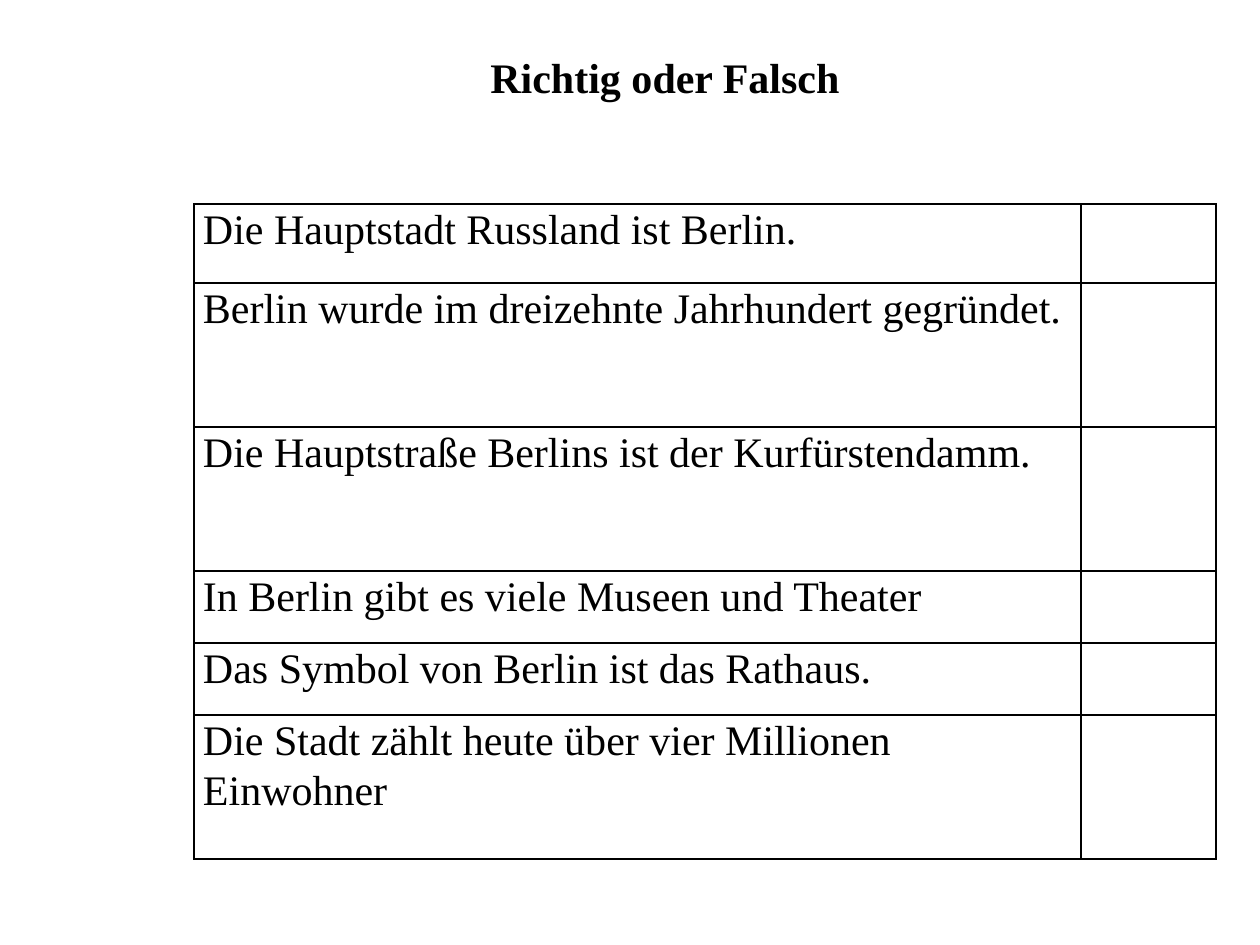
from lxml import etree
from pptx import Presentation, util as u
from pptx.dml.color import RGBColor
from pptx.enum import text
from pptx.oxml.ns import qn

COLORS = {"ink": "000000"}
FONT = "Times New Roman"
SCALE = 914400 / 126
COLS = [887, 135]
ROWS = [
    ("Die Hauptstadt Russland ist Berlin.", 79),
    ("Berlin wurde im dreizehnte Jahrhundert gegründet.", 144),
    ("Die Hauptstraße Berlins ist der Kurfürstendamm.", 144),
    ("In Berlin gibt es viele Museen und Theater", 72),
    ("Das Symbol von Berlin ist das Rathaus.", 72),
    ("Die Stadt zählt heute über vier Millionen Einwohner", 144),
]


def px(n):
    """Turn pixels into EMU."""
    return u.Emu(round(n * SCALE))


def add_run(para, words, bold=False):
    """Add one styled run to a paragraph."""
    run = para.add_run()
    run.text = words
    run.font.name = FONT
    run.font.size = u.Pt(24)
    run.font.bold = bold
    run.font.color.rgb = RGBColor.from_string(COLORS["ink"])


def add_title(slide, words):
    """Add the centred heading."""
    box = slide.shapes.add_textbox(px(144), px(45), px(1042), px(63))
    frame = box.text_frame
    frame.word_wrap = True
    frame.auto_size = text.MSO_AUTO_SIZE.SHAPE_TO_FIT_TEXT
    para = frame.paragraphs[0]
    para.alignment = text.PP_ALIGN.CENTER
    add_run(para, words, bold=True)


def set_frame(cell):
    """Give a cell thin borders on all sides and no fill."""
    props = cell._tc.get_or_add_tcPr()
    for side in ("lnL", "lnR", "lnT", "lnB"):
        line = etree.SubElement(props, qn(f"a:{side}"), w=str(u.Pt(1)))
        fill = etree.SubElement(line, qn("a:solidFill"))
        etree.SubElement(fill, qn("a:srgbClr"), val=COLORS["ink"])
    cell.fill.background()


def add_quiz(slide):
    """Add the table of statements with an empty answer column."""
    high = sum(h for _, h in ROWS)
    shape = slide.shapes.add_table(
        len(ROWS), len(COLS), px(194), px(204), px(sum(COLS)), px(high))
    table = shape.table
    table.first_row = table.horz_banding = False
    for col, wide in zip(table.columns, COLS):
        col.width = px(wide)
    for row, (words, tall) in zip(table.rows, ROWS):
        row.height = px(tall)
        for cell in row.cells:
            cell.margin_left = cell.margin_right = px(9)
            cell.margin_top = cell.margin_bottom = 0
            set_frame(cell)
        para = row.cells[0].text_frame.paragraphs[0]
        para.line_spacing = 1.07
        add_run(para, words)


def main():
    """Build the slide and save it."""
    deck = Presentation()
    deck.slide_width, deck.slide_height = px(1260), px(945)
    slide = deck.slides.add_slide(deck.slide_layouts[6])
    add_quiz(slide)
    add_title(slide, "Richtig oder Falsch")
    deck.save("out.pptx")


if __name__ == "__main__":
    main()
